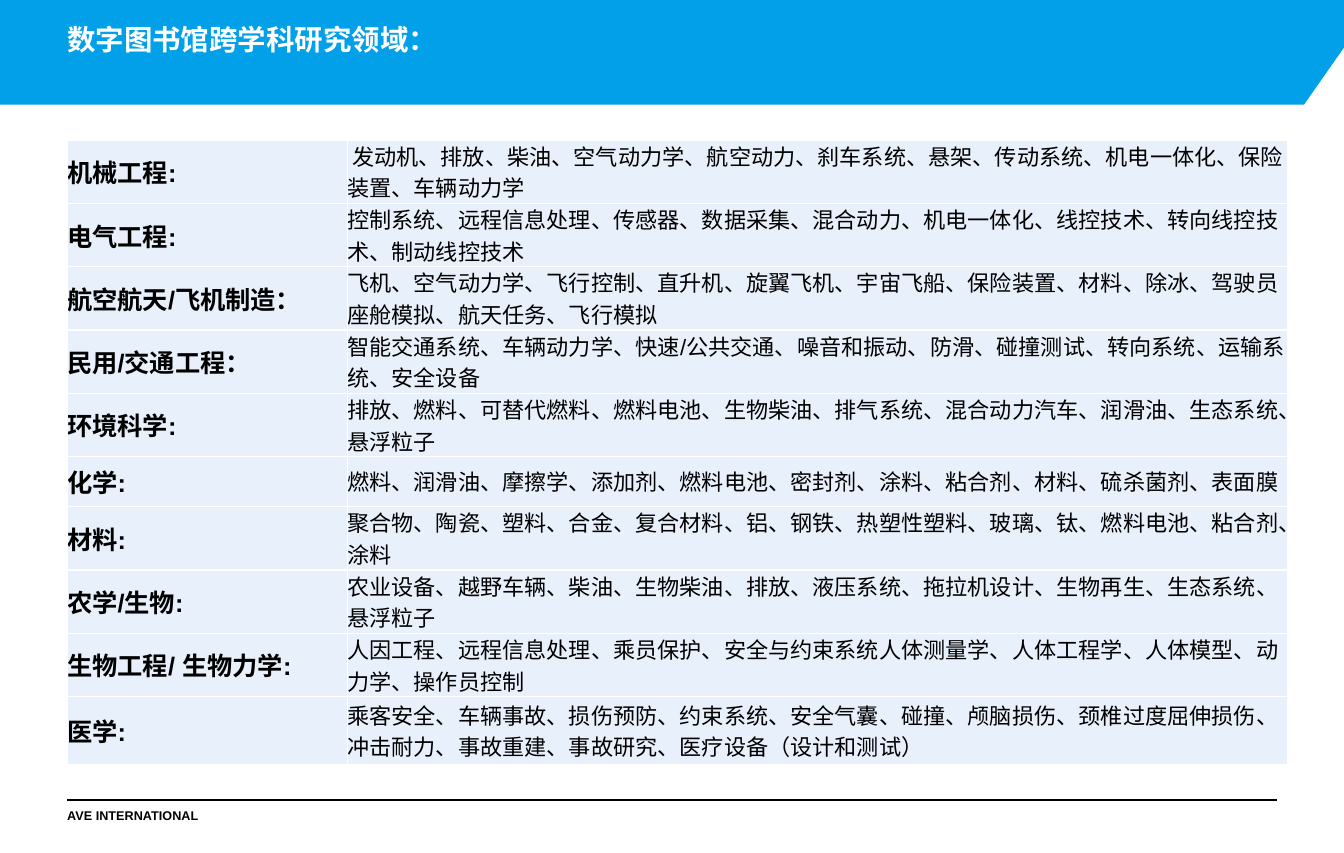
from dataclasses import dataclass

from lxml.etree import SubElement
from pptx import Presentation
from pptx.dml.color import RGBColor
from pptx.enum.shapes import MSO_CONNECTOR
from pptx.enum.text import MSO_ANCHOR, MSO_AUTO_SIZE, PP_ALIGN
from pptx.oxml.ns import qn
from pptx.util import Cm, Pt


@dataclass(frozen=True)
class Theme:
    font: str = "Arial"
    blue: str = "01A0E9"
    pale: str = "E7F0FB"
    white: str = "FFFFFF"
    black: str = "000000"
    title_size: int = 18
    field_size: int = 16
    topic_size: int = 14
    footer_size: int = 8
    topic_spacing: int = 20
    line_width: int = 1


WIDTH, HEIGHT = 30, 19.05
MARGIN = 1.5
COLUMN_WIDTHS = (6.25, 21)
ONE_LINE_ROW, TWO_LINE_ROW, LAST_ROW = 1.12, 1.41, 1.52

RESEARCH_FIELDS = [
    ("机械工程:", " 发动机、排放、柴油、空气动力学、航空动力、刹车系统、悬架、传动系统、机电一体化、保险装置、车辆动力学"),
    ("电气工程:", "控制系统、远程信息处理、传感器、数据采集、混合动力、机电一体化、线控技术、转向线控技术、制动线控技术"),
    ("航空航天/飞机制造：", "飞机、空气动力学、飞行控制、直升机、旋翼飞机、宇宙飞船、保险装置、材料、除冰、驾驶员座舱模拟、航天任务、飞行模拟"),
    ("民用/交通工程：", "智能交通系统、车辆动力学、快速/公共交通、噪音和振动、防滑、碰撞测试、转向系统、运输系统、安全设备"),
    ("环境科学:", "排放、燃料、可替代燃料、燃料电池、生物柴油、排气系统、混合动力汽车、润滑油、生态系统、悬浮粒子"),
    ("化学:", "燃料、润滑油、摩擦学、添加剂、燃料电池、密封剂、涂料、粘合剂、材料、硫杀菌剂、表面膜"),
    ("材料:", "聚合物、陶瓷、塑料、合金、复合材料、铝、钢铁、热塑性塑料、玻璃、钛、燃料电池、粘合剂、涂料"),
    ("农学/生物:", "农业设备、越野车辆、柴油、生物柴油、排放、液压系统、拖拉机设计、生物再生、生态系统、悬浮粒子"),
    ("生物工程/ 生物力学:", "人因工程、远程信息处理、乘员保护、安全与约束系统人体测量学、人体工程学、人体模型、动力学、操作员控制"),
    ("医学:", "乘客安全、车辆事故、损伤预防、约束系统、安全气囊、碰撞、颅脑损伤、颈椎过度屈伸损伤、冲击耐力、事故重建、事故研究、医疗设备（设计和测试）"),
]
ROW_HEIGHTS = [TWO_LINE_ROW] * 5 + [ONE_LINE_ROW] + [TWO_LINE_ROW] * 3 + [LAST_ROW]


class SlideBuilder:
    def __init__(self, slide, theme):
        self.slide = slide
        self.theme = theme

    def paint(self, fill, color):
        fill.solid()
        fill.fore_color.rgb = RGBColor.from_string(color)

    def set_text(self, text_frame, text, size, color, bold):
        text_frame.text = text
        text_frame.word_wrap = True
        paragraph = text_frame.paragraphs[0]
        paragraph.alignment = PP_ALIGN.LEFT
        for run in paragraph.runs:
            run.font.name = self.theme.font
            run.font.size = Pt(size)
            run.font.bold = bold
            run.font.color.rgb = RGBColor.from_string(color)
        return paragraph

    def clear_margins(self, holder):
        """Remove the inner margins of a text frame or a table cell."""
        holder.margin_left = holder.margin_right = 0
        holder.margin_top = holder.margin_bottom = 0

    def background(self, color):
        self.paint(self.slide.background.fill, color)

    def title(self, text, left, top, width, height):
        title = self.slide.shapes.title
        title.left, title.top = Cm(left), Cm(top)
        title.width, title.height = Cm(width), Cm(height)
        frame = title.text_frame
        self.clear_margins(frame)
        frame.vertical_anchor = MSO_ANCHOR.TOP
        frame.auto_size = MSO_AUTO_SIZE.NONE
        self.set_text(frame, text, self.theme.title_size, self.theme.white, True)

    def panel(self, corners, color):
        points = [(Cm(x), Cm(y)) for x, y in corners]
        builder = self.slide.shapes.build_freeform(*points[0])
        builder.add_line_segments(points[1:], close=True)
        panel = builder.convert_to_shape()
        panel.shadow.inherit = False
        self.paint(panel.fill, color)
        panel.line.fill.background()

    def rule(self, left, right, y):
        rule = self.slide.shapes.add_connector(
            MSO_CONNECTOR.STRAIGHT, Cm(left), Cm(y), Cm(right), Cm(y))
        rule.line.color.rgb = RGBColor.from_string(self.theme.black)
        rule.line.width = Pt(self.theme.line_width)
        SubElement(rule._element.spPr, qn("a:effectLst"))

    def footer(self, text, left, top, width, height):
        box = self.slide.shapes.add_textbox(Cm(left), Cm(top), Cm(width), Cm(height))
        self.clear_margins(box.text_frame)
        self.set_text(box.text_frame, text, self.theme.footer_size, self.theme.black, True)

    def borders(self, cell):
        properties = cell._tc.get_or_add_tcPr()
        for index, side in enumerate(("lnL", "lnR", "lnT", "lnB")):
            line = properties.makeelement(
                qn(f"a:{side}"), {"w": str(Pt(self.theme.line_width))})
            fill = SubElement(line, qn("a:solidFill"))
            SubElement(fill, qn("a:srgbClr"), val=self.theme.white)
            properties.insert(index, line)

    def cell(self, cell, text, size, bold):
        self.clear_margins(cell)
        cell.vertical_anchor = MSO_ANCHOR.MIDDLE
        self.paint(cell.fill, self.theme.pale)
        self.borders(cell)
        return self.set_text(cell.text_frame, text, size, self.theme.black, bold)

    def table(self, entries, left, top, widths, heights):
        table = self.slide.shapes.add_table(
            len(entries), len(widths), Cm(left), Cm(top),
            Cm(sum(widths)), Cm(sum(heights))).table
        table.first_row = table.horz_banding = False
        for column, width in zip(table.columns, widths):
            column.width = Cm(width)
        for index, ((field, topics), height) in enumerate(zip(entries, heights)):
            table.rows[index].height = Cm(height)
            self.cell(table.cell(index, 0), field, self.theme.field_size, True)
            paragraph = self.cell(
                table.cell(index, 1), topics, self.theme.topic_size, False)
            paragraph.line_spacing = Pt(self.theme.topic_spacing)


def main():
    presentation = Presentation()
    presentation.slide_width, presentation.slide_height = Cm(WIDTH), Cm(HEIGHT)
    slide = presentation.slides.add_slide(presentation.slide_layouts[5])
    theme = Theme()
    builder = SlideBuilder(slide, theme)

    builder.background(theme.blue)
    builder.panel([(0, HEIGHT), (WIDTH, HEIGHT), (WIDTH, 1.07),
                   (29.11, 2.34), (0, 2.34)], theme.white)
    builder.title("数字图书馆跨学科研究领域：", MARGIN, 0.5, 27, 1.85)
    builder.table(RESEARCH_FIELDS, MARGIN, 3.13, COLUMN_WIDTHS, ROW_HEIGHTS)
    builder.rule(MARGIN, WIDTH - MARGIN, 17.87)
    builder.footer("AVE INTERNATIONAL", MARGIN, 18.05, 7, 0.33)
    presentation.save("out.pptx")


if __name__ == "__main__":
    main()
